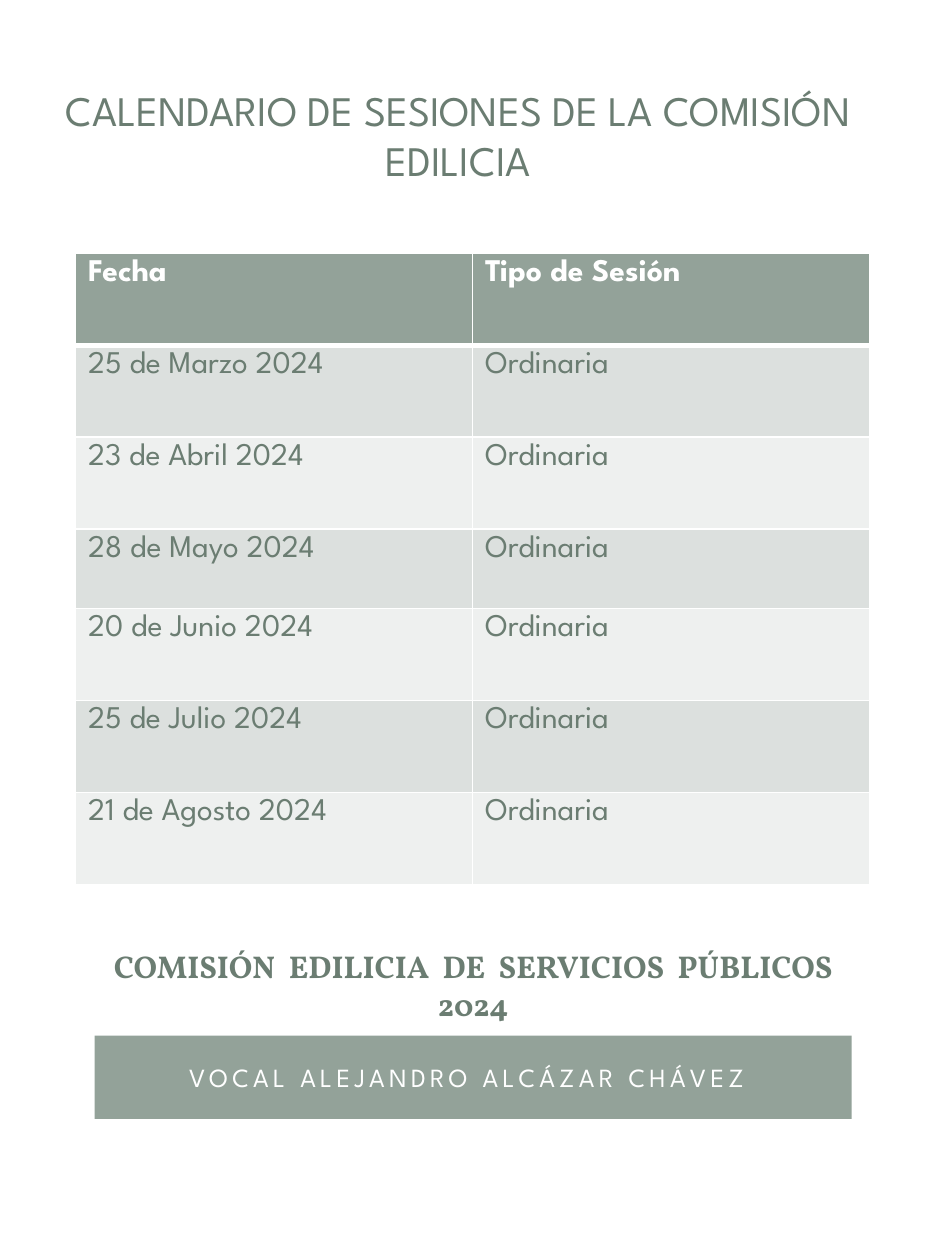
from lxml import etree
from pptx import Presentation
from pptx import util as u
from pptx.dml.color import RGBColor
from pptx.enum import shapes, text
from pptx.oxml import ns

SAGE, MOSS, WHITE = "93A299", "6B7D72", "FFFFFF"
BANDS = ("DCE0DE", "EEF0EF")
SANS, SERIF = "League Spartan", "Vollkorn"


def color(value):
    return RGBColor.from_string(value)


def write(frame, content, size=18, font=SANS, fill=MOSS, bold=False,
          align=None, anchor=None, tracking=0, word_gap=0):
    """Write one paragraph; tracking and word_gap are extra points of spacing."""
    frame.word_wrap = True
    if anchor is not None:
        frame.vertical_anchor = anchor
    paragraph = frame.paragraphs[0]
    paragraph.alignment = align
    pieces = [(content, tracking)]
    if word_gap:
        pieces = [piece for word in content.split()
                  for piece in ((" ", word_gap), (word, tracking))][1:]
    for piece, spacing in pieces:
        run = paragraph.add_run()
        run.text = piece
        run.font.size, run.font.name, run.font.bold = u.Pt(size), font, bold
        run.font.color.rgb = color(fill)
        if spacing:
            run.font._element.set("spc", str(int(spacing * 100)))


def border(cell, side, width):
    line = etree.SubElement(cell._tc.get_or_add_tcPr(), ns.qn(f"a:ln{side}"),
                            w=str(u.Pt(width)))
    solid = etree.SubElement(line, ns.qn("a:solidFill"))
    etree.SubElement(solid, ns.qn("a:srgbClr"), val=WHITE)


class Page:
    def __init__(self, slide):
        self.slide = slide
        slide.background.fill.solid()
        slide.background.fill.fore_color.rgb = color(WHITE)

    def label(self, box, content, **style):
        frame = self.slide.shapes.add_textbox(*map(u.Inches, box)).text_frame
        write(frame, content, align=text.PP_ALIGN.CENTER, **style)

    def bar(self, box, fill):
        bar = self.slide.shapes.add_shape(
            shapes.MSO_SHAPE.RECTANGLE, *map(u.Inches, box))
        bar.shadow.inherit = False
        bar.fill.solid()
        bar.fill.fore_color.rgb = color(fill)
        bar.line.fill.background()

    def table(self, box, rows, heights):
        table = self.slide.shapes.add_table(
            len(rows), len(rows[0]), *map(u.Inches, box)).table
        for r, (row, height) in enumerate(zip(rows, heights)):
            table.rows[r].height = u.Inches(height)
            header = r == 0
            for c, content in enumerate(row):
                cell = table.cell(r, c)
                write(cell.text_frame, content, bold=header,
                      fill=WHITE if header else MOSS)
                # Borders come before the fill in the cell's properties
                for side in "LRTB":
                    thick = (header and side == "B") or (r == 1 and side == "T")
                    border(cell, side, 3 if thick else 1)
                cell.fill.solid()
                cell.fill.fore_color.rgb = color(
                    SAGE if header else BANDS[(r - 1) % 2])


def main():
    deck = Presentation()
    deck.slide_width, deck.slide_height = u.Inches(7.5), u.Inches(10)
    page = Page(deck.slides.add_slide(deck.slide_layouts[6]))
    middle = text.MSO_ANCHOR.MIDDLE

    # Heading
    page.label((0.29, 0.62, 6.69, 0.91),
               "CALENDARIO DE SESIONES DE LA COMISIÓN EDILICIA", size=24)

    # Session calendar
    dates = ("25 de Marzo 2024", "23 de Abril 2024", "28 de Mayo 2024",
             "20 de Junio 2024", "25 de Julio 2024", "21 de Agosto 2024")
    sessions = [("Fecha", "Tipo de Sesión")]
    sessions += [(date, "Ordinaria") for date in dates]
    heights = [0.63 if "Mayo" in date else 0.73 for date, _ in sessions]
    page.table((0.6, 2.01, 6.3, sum(heights)), sessions, heights)

    # Commission and its member
    page.label((0.75, 7.44, 6.01, 0.76),
               "COMISIÓN EDILICIA DE SERVICIOS PÚBLICOS 2024",
               font=SERIF, bold=True, anchor=middle, word_gap=4)
    page.bar((0.75, 8.22, 6.01, 0.66), SAGE)
    page.label((0.78, 8.25, 5.94, 0.59), "VOCAL ALEJANDRO ALCÁZAR CHÁVEZ ",
               size=15, fill=WHITE, anchor=middle, tracking=2.5)

    deck.save("out.pptx")


if __name__ == "__main__":
    main()
